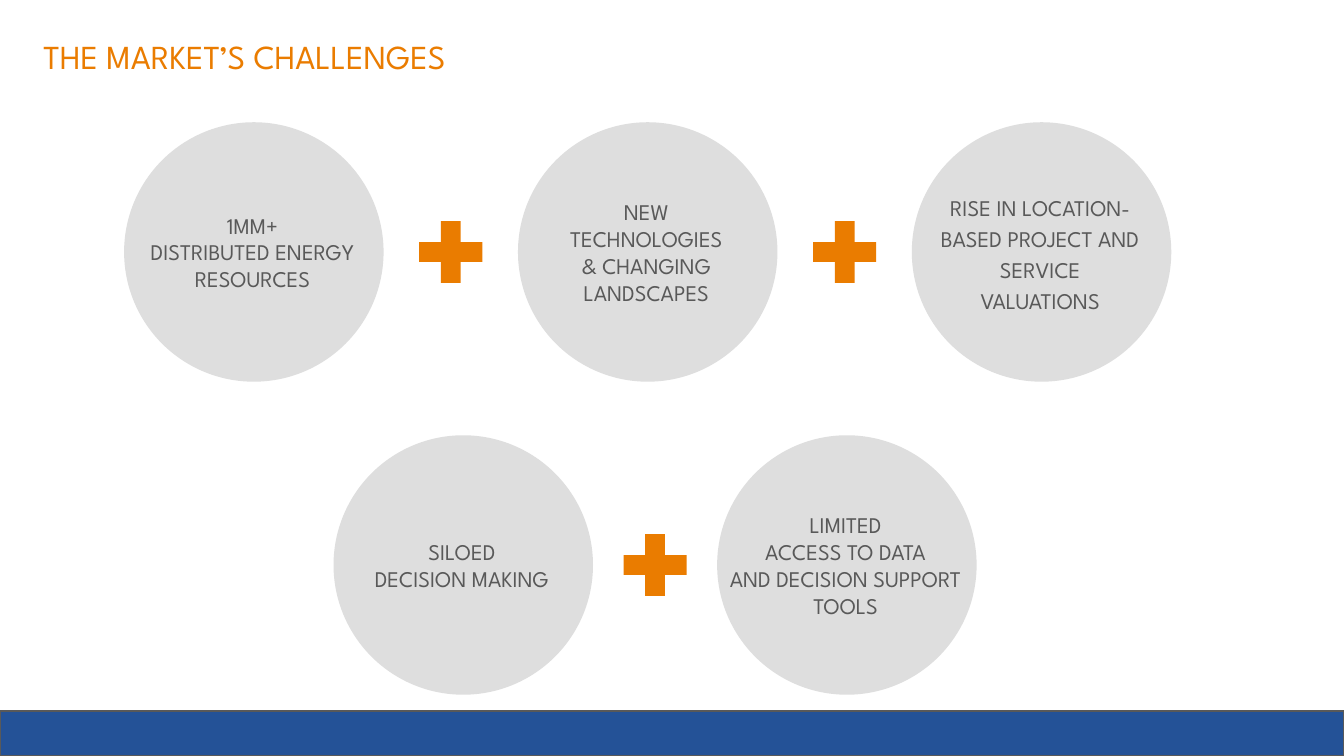
from pptx import Presentation
from pptx.dml.color import RGBColor
from pptx.enum.shapes import MSO_SHAPE as Shape
from pptx.enum.text import MSO_ANCHOR as Anchor, MSO_AUTO_SIZE as AutoSize, PP_ALIGN as Align
from pptx.util import Pt

TITLE = "THE MARKET’S CHALLENGES"
ROWS = [
    {"center_y": 135, "first_x": 136, "pitch": 211, "challenges": [
        {"lines": ["1MM+", "DISTRIBUTED ENERGY RESOURCES"], "width": 130},
        {"lines": ["NEW", "TECHNOLOGIES", "& CHANGING LANDSCAPES"], "width": 151},
        {"lines": ["RISE IN LOCATION-BASED PROJECT AND SERVICE VALUATIONS"],
         "width": 122.4, "spacing": 1.15},
    ]},
    {"center_y": 302.7, "first_x": 248.2, "pitch": 205.5, "challenges": [
        {"lines": ["SILOED", "DECISION MAKING"], "width": 130},
        {"lines": ["LIMITED", "ACCESS TO DATA", "AND DECISION SUPPORT TOOLS"], "width": 151},
    ]},
]
COLORS = {"orange": "EA7C00", "gray": "DEDEDE", "text": "595959", "blue": "245297"}
FONT = "League Spartan"
SLIDE_WIDTH, SLIDE_HEIGHT = 720, 405
BAR_HEIGHT = 24
DIAMETER = 139
PLUS_WIDTH, PLUS_HEIGHT = 46, 45
LABEL_HEIGHT = 104
INSET = 7.2


def color(name):
    return RGBColor.from_string(COLORS[name])


def centered(x, y, width, height):
    return Pt(x - width / 2), Pt(y - height / 2), Pt(width), Pt(height)


def add_solid(slide, kind, box, fill):
    shape = slide.shapes.add_shape(kind, *box)
    shape.shadow.inherit = False
    shape.fill.solid()
    shape.fill.fore_color.rgb = color(fill)
    shape.line.fill.background()
    return shape


def format_text(text_frame, anchor, alignment, size, color_name, spacing=None):
    text_frame.word_wrap = True
    text_frame.auto_size = AutoSize.NONE
    text_frame.vertical_anchor = anchor
    text_frame.margin_left = text_frame.margin_right = Pt(INSET)
    text_frame.margin_top = text_frame.margin_bottom = Pt(INSET)
    for paragraph in text_frame.paragraphs:
        paragraph.alignment = alignment
        paragraph.line_spacing = spacing
        for run in paragraph.runs:
            run.font.name = FONT
            run.font.size = Pt(size)
            run.font.color.rgb = color(color_name)


def add_challenge(slide, x, y, challenge):
    add_solid(slide, Shape.OVAL, centered(x, y, DIAMETER, DIAMETER), "gray")
    label = slide.shapes.add_textbox(*centered(x - 0.7, y, challenge["width"], LABEL_HEIGHT))
    label.text_frame.text = "\n".join(challenge["lines"])
    format_text(label.text_frame, Anchor.MIDDLE, Align.CENTER, 12, "text",
                challenge.get("spacing"))


def add_row(slide, row):
    y = row["center_y"]
    for index, challenge in enumerate(row["challenges"]):
        x = row["first_x"] + index * row["pitch"]
        if index:
            box = centered(x - row["pitch"] / 2, y, PLUS_WIDTH, PLUS_HEIGHT)
            plus = add_solid(slide, Shape.MATH_PLUS, box, "orange")
            plus.adjustments[0] = 0.235
        add_challenge(slide, x, y, challenge)


def main():
    """Build the slide of market challenges."""
    presentation = Presentation()
    presentation.slide_width, presentation.slide_height = Pt(SLIDE_WIDTH), Pt(SLIDE_HEIGHT)
    slide = presentation.slides.add_slide(presentation.slide_layouts[5])

    title = slide.shapes.title
    title.left, title.top, title.width, title.height = Pt(16), Pt(12.2), Pt(641), Pt(71)
    title.text_frame.text = TITLE
    format_text(title.text_frame, Anchor.TOP, Align.LEFT, 18, "orange")

    bar_box = Pt(0), Pt(SLIDE_HEIGHT - BAR_HEIGHT), Pt(SLIDE_WIDTH), Pt(BAR_HEIGHT)
    bar = add_solid(slide, Shape.RECTANGLE, bar_box, "blue")
    bar.line.color.rgb = color("text")
    bar.line.width = Pt(0.75)

    for row in ROWS:
        add_row(slide, row)
    presentation.save("out.pptx")


if __name__ == "__main__":
    main()
